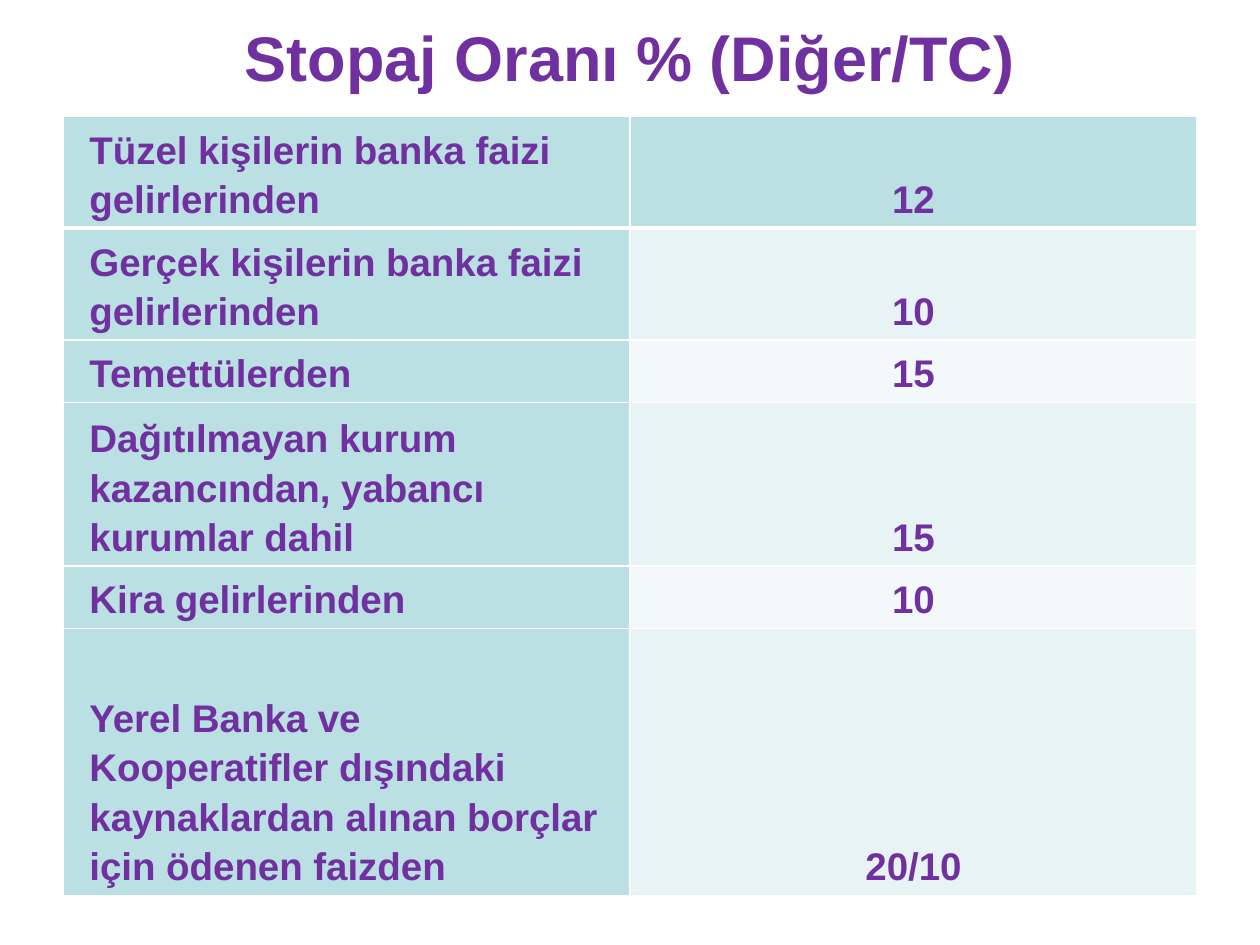
from dataclasses import dataclass

from lxml import etree
from pptx import Presentation
from pptx.dml.color import RGBColor
from pptx.enum.text import MSO_ANCHOR, PP_ALIGN
from pptx.oxml.ns import qn
from pptx.util import Inches, Pt

LEFT, CENTER = PP_ALIGN.LEFT, PP_ALIGN.CENTER
MIDDLE, BOTTOM = MSO_ANCHOR.MIDDLE, MSO_ANCHOR.BOTTOM
TITLE_ONLY = 5


@dataclass(frozen=True)
class Theme:
    font: str = "Arial"
    text: str = "7030A0"
    accent: str = "BBE0E3"
    bands: tuple = ("F3F9FA", "E7F3F4")
    border: str = "FFFFFF"
    title_size: int = 36
    table_size: int = 22


def write(frame, text, *, size, theme, align=LEFT, anchor=MIDDLE, spacing=None):
    """Fill a text frame with one formatted paragraph."""
    frame.word_wrap = True
    frame.vertical_anchor = anchor
    paragraph = frame.paragraphs[0]
    paragraph.alignment = align
    paragraph.line_spacing = spacing
    run = paragraph.add_run()
    run.text = text
    run.font.name = theme.font
    run.font.size = Pt(size)
    run.font.bold = True
    run.font.color.rgb = RGBColor.from_string(theme.text)


class SlideBuilder:
    def __init__(self, slide, theme):
        self.slide = slide
        self.theme = theme

    def title(self, text, left, top, width, height):
        heading = self.slide.shapes.title
        heading.left, heading.top = Inches(left), Inches(top)
        heading.width, heading.height = Inches(width), Inches(height)
        write(heading.text_frame, text, size=self.theme.title_size,
              theme=self.theme, align=CENTER)

    def table(self, rows, heights, left, top, width):
        rates = self.slide.shapes.add_table(
            len(rows), len(rows[0]), Inches(left), Inches(top),
            Inches(width), Inches(sum(heights))).table
        for r, (values, height) in enumerate(zip(rows, heights)):
            rates.rows[r].height = Inches(height)
            for c, value in enumerate(values):
                is_accent = r == 0 or c == 0
                fill = self.theme.accent if is_accent else self.theme.bands[r % 2]
                self.cell(rates.cell(r, c), value, fill,
                          align=CENTER if c else LEFT,
                          top=3 if r == 1 else 1, bottom=3 if r == 0 else 1)

    def cell(self, cell, text, fill, align, top, bottom):
        cell.margin_left = cell.margin_right = Inches(0.21)
        cell.margin_top = cell.margin_bottom = Inches(0.05)
        cell.vertical_anchor = BOTTOM
        cell.fill.solid()
        cell.fill.fore_color.rgb = RGBColor.from_string(fill)
        write(cell.text_frame, text, size=self.theme.table_size,
              theme=self.theme, align=align, anchor=BOTTOM, spacing=1.15)
        self.borders(cell, lnL=1, lnR=1, lnT=top, lnB=bottom)

    def borders(self, cell, **widths):
        # Border lines come before the fill in the cell properties
        properties = cell._tc.get_or_add_tcPr()
        for position, (side, width) in enumerate(widths.items()):
            line = etree.Element(qn(f"a:{side}"), w=str(Pt(width)))
            solid = etree.SubElement(line, qn("a:solidFill"))
            etree.SubElement(solid, qn("a:srgbClr"), val=self.theme.border)
            properties.insert(position, line)


RATES = [
    ("Tüzel kişilerin banka faizi gelirlerinden", "12"),
    ("Gerçek kişilerin banka faizi gelirlerinden", "10"),
    ("Temettülerden", "15"),
    ("Dağıtılmayan kurum kazancından, yabancı kurumlar dahil", "15"),
    ("Kira gelirlerinden", "10"),
    ("Yerel Banka ve Kooperatifler dışındaki kaynaklardan alınan borçlar "
     "için ödenen faizden", "20/10"),
]
ROW_HEIGHTS = [0.89, 0.89, 0.48, 1.3, 0.48, 2.12]


def main():
    deck = Presentation()
    deck.slide_width, deck.slide_height = Inches(10), Inches(7.5)
    slide = deck.slides.add_slide(deck.slide_layouts[TITLE_ONLY])
    builder = SlideBuilder(slide, Theme())

    # Heading
    builder.title("Stopaj Oranı % (Diğer/TC)", 0.5, 0.13, 9, 0.63)

    # Withholding rates by type of income
    builder.table(RATES, ROW_HEIGHTS, 0.5, 0.92, 9)

    deck.save("out.pptx")


if __name__ == "__main__":
    main()
